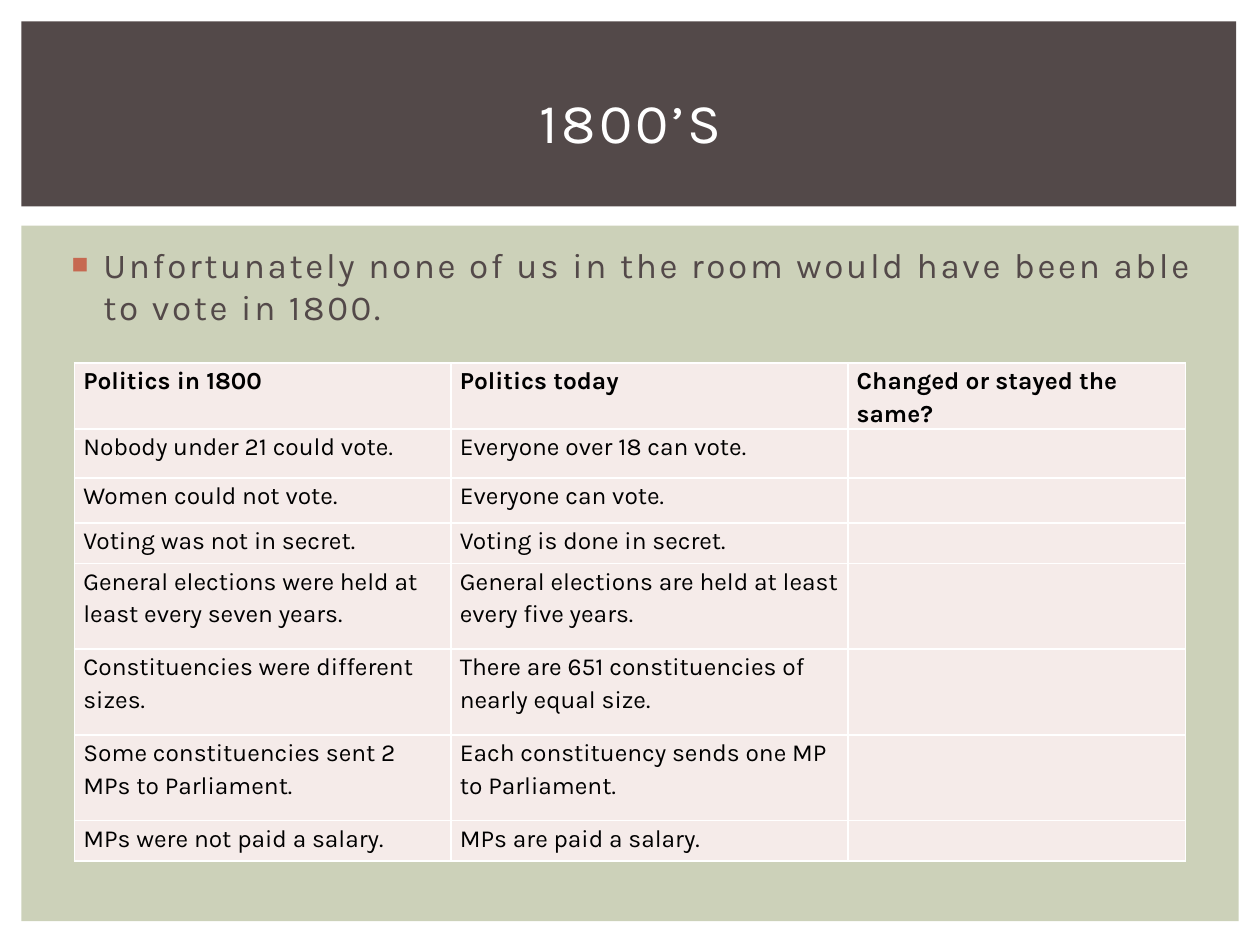
from lxml.etree import SubElement
from pptx import Presentation
from pptx.dml.color import RGBColor
from pptx.enum.shapes import MSO_SHAPE
from pptx.enum.text import MSO_ANCHOR, MSO_AUTO_SIZE, PP_ALIGN
from pptx.oxml import parse_xml
from pptx.oxml.ns import nsdecls, qn
from pptx.util import Cm, Pt

INK, WHITE, SAGE, RUST, BLUSH = "534949", "FFFFFF", "CCD1B9", "C66951", "F5EBE9"


def paint(colour_format, colour):
    """Set a fill or a font to a solid hex colour."""
    if hasattr(colour_format, "solid"):
        colour_format.solid()
        colour_format = colour_format.fore_color
    colour_format.rgb = RGBColor.from_string(colour)


def write(paragraph, text, colour, spacing=0, **formats):
    """Add a run in Karla; spacing is the letter spacing in points."""
    run = paragraph.add_run()
    run.text = text
    for name, value in {"name": "Karla", "bold": False, **formats}.items():
        setattr(run.font, name, value)
    paint(run.font.color, colour)
    if spacing:
        run.font._element.set("spc", str(int(spacing * 100)))


prs = Presentation()
prs.slide_width, prs.slide_height = Cm(25.4), Cm(19.05)
slide = prs.slides.add_slide(prs.slide_layouts[1])
title, statement = slide.placeholders

# Background panels, placed behind the placeholders
panels = [(4.55, 24.54, 14.02, SAGE), (0.43, 24.49, 3.73, INK)]
for position, (top, width, height, colour) in enumerate(panels, start=2):
    panel = slide.shapes.add_shape(
        MSO_SHAPE.RECTANGLE, Cm(0.43), Cm(top), Cm(width), Cm(height))
    panel.shadow.inherit = False
    paint(panel.fill, colour)
    panel.line.fill.background()
    slide.shapes._spTree.insert(position, panel._element)

# Title and statement
boxes = [
    (title, (1.07, 0.99, 23.29, 2.92), MSO_ANCHOR.MIDDLE),
    (statement, (1.07, 4.78, 23.34, 12.24), MSO_ANCHOR.TOP),
]
for box, place, anchor in boxes:
    box.left, box.top, box.width, box.height = map(Cm, place)
    box.text_frame.auto_size = MSO_AUTO_SIZE.NONE
    box.text_frame.vertical_anchor = anchor

heading = title.text_frame.paragraphs[0]
heading.alignment = PP_ALIGN.CENTER
write(heading, "1800’S", WHITE, spacing=2, size=Pt(32))

point = statement.text_frame.paragraphs[0]
point.space_before = Pt(4)
write(point, "Unfortunately none of us in the room would have been able to vote in 1800.",
      INK, spacing=1.5, size=Pt(20))
point_format = point._p.get_or_add_pPr()
point_format.set("marL", str(Cm(0.76)))
point_format.set("indent", str(Cm(-0.64)))
bullet_colour = SubElement(point_format, qn("a:buClr"))
SubElement(bullet_colour, qn("a:srgbClr"), val=RUST)
SubElement(point_format, qn("a:buSzPct"), val="80000")
SubElement(point_format, qn("a:buFont"), typeface="Arial")
SubElement(point_format, qn("a:buChar"), char="■")

# Comparison table; the last column is left for answers
comparison = [
    ("Politics in 1800", "Politics today", "Changed or stayed the same?"),
    ("Nobody under 21 could vote.", "Everyone over 18 can vote.", ""),
    ("Women could not vote.", "Everyone can vote.", ""),
    ("Voting was not in secret.", "Voting is done in secret.", ""),
    ("General elections were held at least every seven years.",
     "General elections are held at least every five years.", ""),
    ("Constituencies were different sizes.",
     "There are 651 constituencies of nearly equal size.", ""),
    ("Some constituencies sent 2 MPs to Parliament.",
     "Each constituency sends one MP to Parliament.", ""),
    ("MPs were not paid a salary.", "MPs are paid a salary.", ""),
]
column_widths = [7.59, 8, 6.81]
row_heights = [0.79, 0.99, 0.91, 0.81, 1.73, 1.73, 1.73, 0.81]
cell_format = {"margin_left": Cm(0.18), "margin_right": Cm(0.18),
               "margin_top": 0, "margin_bottom": 0}

table = slide.shapes.add_table(
    len(comparison), len(column_widths), Cm(1.5), Cm(7.32),
    Cm(sum(column_widths)), Cm(sum(row_heights))).table
table.first_row = table.horz_banding = False
for column, width in zip(table.columns, column_widths):
    column.width = Cm(width)

for row_number, (row, height, texts) in enumerate(zip(table.rows, row_heights, comparison)):
    row.height = Cm(height)
    for cell, text in zip(row.cells, texts):
        for name, value in cell_format.items():
            setattr(cell, name, value)
        paint(cell.fill, BLUSH)
        for order, side in enumerate("LRTB"):
            cell._tc.get_or_add_tcPr().insert(order, parse_xml(
                f'<a:ln{side} {nsdecls("a")} w="{Pt(1)}"><a:solidFill>'
                f'<a:srgbClr val="{WHITE}"/></a:solidFill></a:ln{side}>'))
        if text:
            entry = cell.text_frame.paragraphs[0]
            entry.line_spacing = 1.15
            entry.space_before = Pt(3)
            write(entry, text, "000000", size=Pt(14), bold=row_number == 0)

prs.save("out.pptx")
